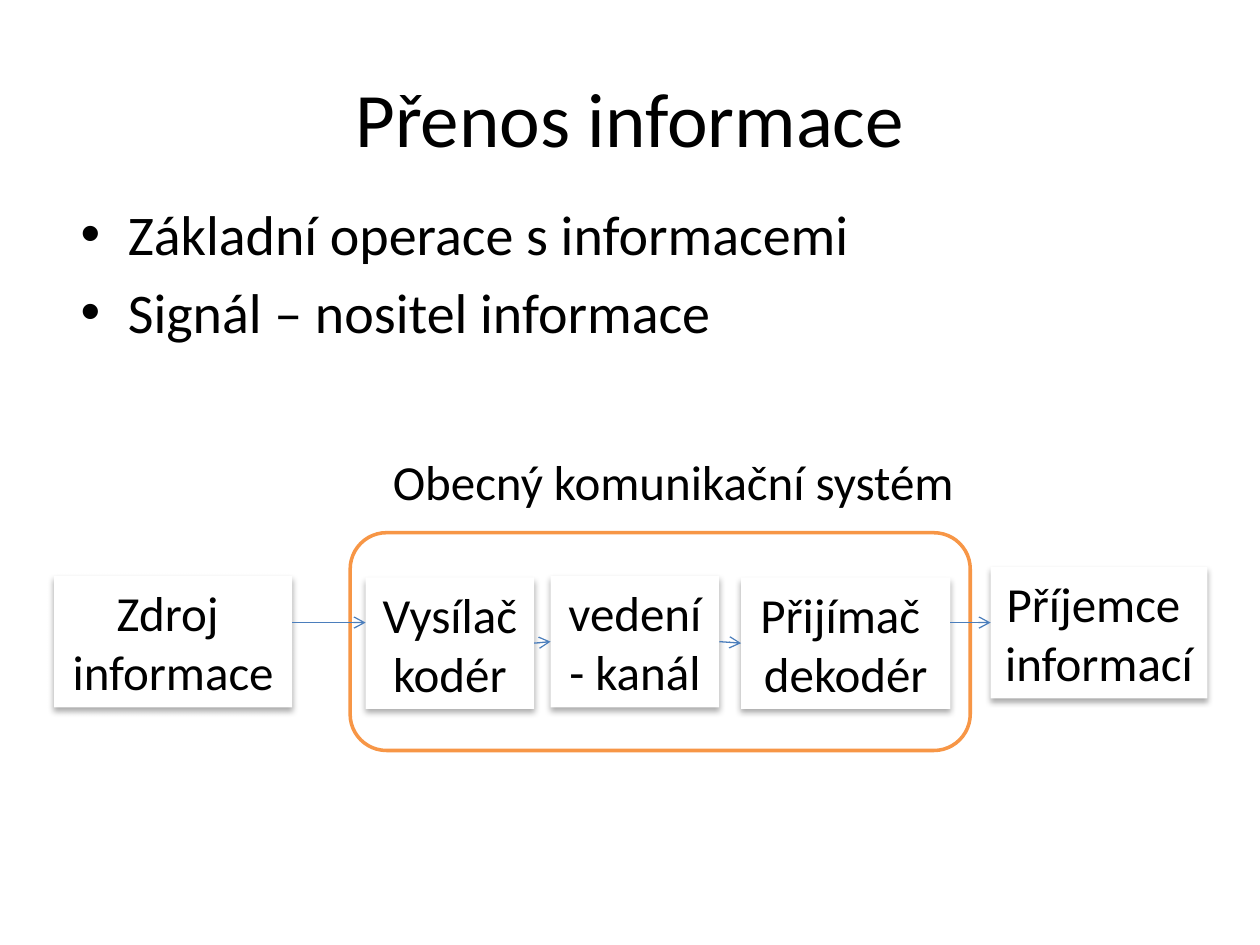
from lxml import etree
from pptx import Presentation
from pptx import util as u
from pptx.dml.color import RGBColor
from pptx.enum import shapes, text
from pptx.oxml import ns, parse_xml

BLACK = RGBColor(0x00, 0x00, 0x00)
WHITE = RGBColor(0xFF, 0xFF, 0xFF)
ORANGE = RGBColor(0xF7, 0x96, 0x46)
BLUE = RGBColor(0x4B, 0x7E, 0xBC)
CENTER = text.PP_ALIGN.CENTER


def write(frame, lines, size, align=None):
    for i, line in enumerate(lines):
        para = frame.paragraphs[0] if i == 0 else frame.add_paragraph()
        para.alignment = align
        run = para.add_run()
        run.text = line
        run.font.name = "Calibri"
        run.font.size = u.Pt(size)
        run.font.color.rgb = BLACK


def place(shape, left, top, width, height):
    shape.left, shape.top = u.Cm(left), u.Cm(top)
    shape.width, shape.height = u.Cm(width), u.Cm(height)


deck = Presentation()
deck.slide_width, deck.slide_height = u.Cm(25.4), u.Cm(19.05)
slide = deck.slides.add_slide(deck.slide_layouts[1])
items = slide.shapes

# Title and list
title = items.title
place(title, 1.27, 0.76, 22.86, 3.18)
title.text_frame.vertical_anchor = text.MSO_ANCHOR.MIDDLE
write(title.text_frame, ["Přenos informace"], 44, CENTER)
body = slide.placeholders[1]
place(body, 1.37, 3.89, 22.86, 12.57)
write(body.text_frame,
      ["Základní operace s informacemi", "Signál – nositel informace"], 32)

# Frame of the communication system
frame = items.add_shape(shapes.MSO_SHAPE.FLOWCHART_ALTERNATE_PROCESS,
                        u.Cm(7.06), u.Cm(10.74), u.Cm(12.5), u.Cm(4.39))
frame.shadow.inherit = False
frame.fill.solid()
frame.fill.fore_color.rgb = WHITE
frame.line.color.rgb = ORANGE
frame.line.width = u.Pt(2)

# Stages: left, top, width, lines
stages = [
    (1.09, 11.61, 4.8, ["Zdroj ", "informace"]),
    (7.37, 11.64, 3.4, ["Vysílač", "kodér"]),
    (11.1, 11.61, 3.4, ["vedení ", "- kanál"]),
    (14.94, 11.64, 4.22, ["Přijímač ", "dekodér"]),
    (19.97, 11.43, 4.37, ["Příjemce ", "informací"]),
]
SHADOW = (f'<a:outerShdw {ns.nsdecls("a")} blurRad="{u.Pt(3.5)}" '
          f'dist="{u.Pt(2.2)}" dir="5400000" rotWithShape="0">'
          '<a:srgbClr val="000000"><a:alpha val="32000"/></a:srgbClr>'
          '</a:outerShdw>')
boxes = []
for left, top, width, lines in stages:
    box = items.add_shape(shapes.MSO_SHAPE.RECTANGLE, u.Cm(left), u.Cm(top),
                          u.Cm(width), u.Cm(2.65))
    box.fill.solid()
    box.fill.fore_color.rgb = WHITE
    box.line.fill.background()
    box.shadow.inherit = False
    box.element.spPr.find(ns.qn("a:effectLst")).append(parse_xml(SHADOW))
    box.text_frame.word_wrap = True
    box.text_frame.auto_size = text.MSO_AUTO_SIZE.SHAPE_TO_FIT_TEXT
    write(box.text_frame, lines, 28, CENTER)
    boxes.append(box)

# Arrows: inside the system they join side middles, outside they run level
level = u.Cm(12.55)
for i, (start, end) in enumerate(zip(boxes, boxes[1:])):
    arrow = items.add_connector(shapes.MSO_CONNECTOR.STRAIGHT,
                                start.left + start.width, level,
                                end.left, level)
    if i in (1, 2):
        arrow.begin_connect(start, 3)
        arrow.end_connect(end, 1)
    arrow.line.color.rgb = BLUE
    arrow.line.width = u.Pt(0.75)
    etree.SubElement(arrow.line._get_or_add_ln(), ns.qn("a:tailEnd"),
                     type="arrow")
    etree.SubElement(arrow.element.spPr, ns.qn("a:effectLst"))

# Caption
label = items.add_textbox(u.Cm(7.67), u.Cm(8.97), u.Cm(11.86), u.Cm(1.45))
label.text_frame.word_wrap = True
label.text_frame.auto_size = text.MSO_AUTO_SIZE.SHAPE_TO_FIT_TEXT
write(label.text_frame, ["Obecný komunikační systém"], 28)

deck.save("out.pptx")
